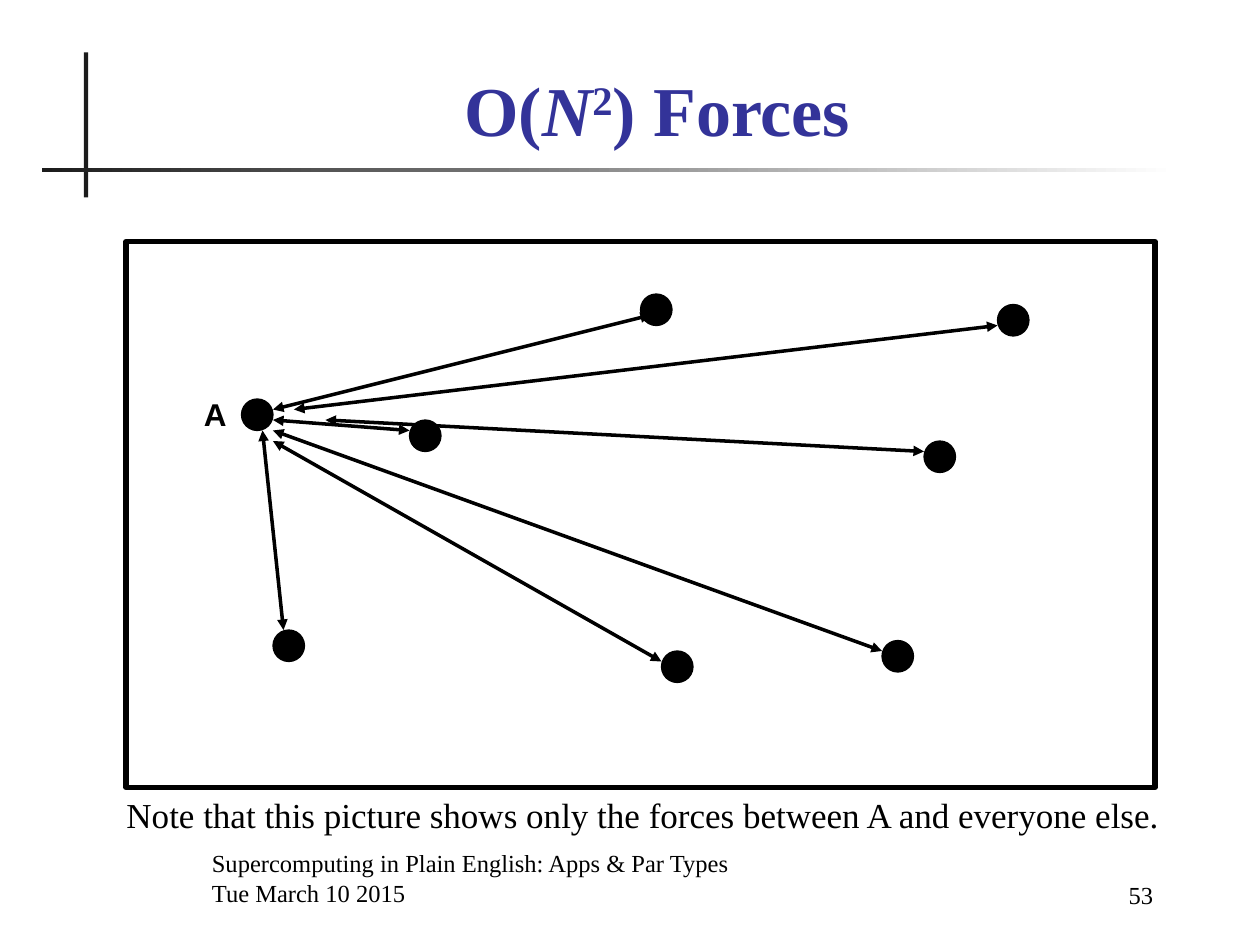
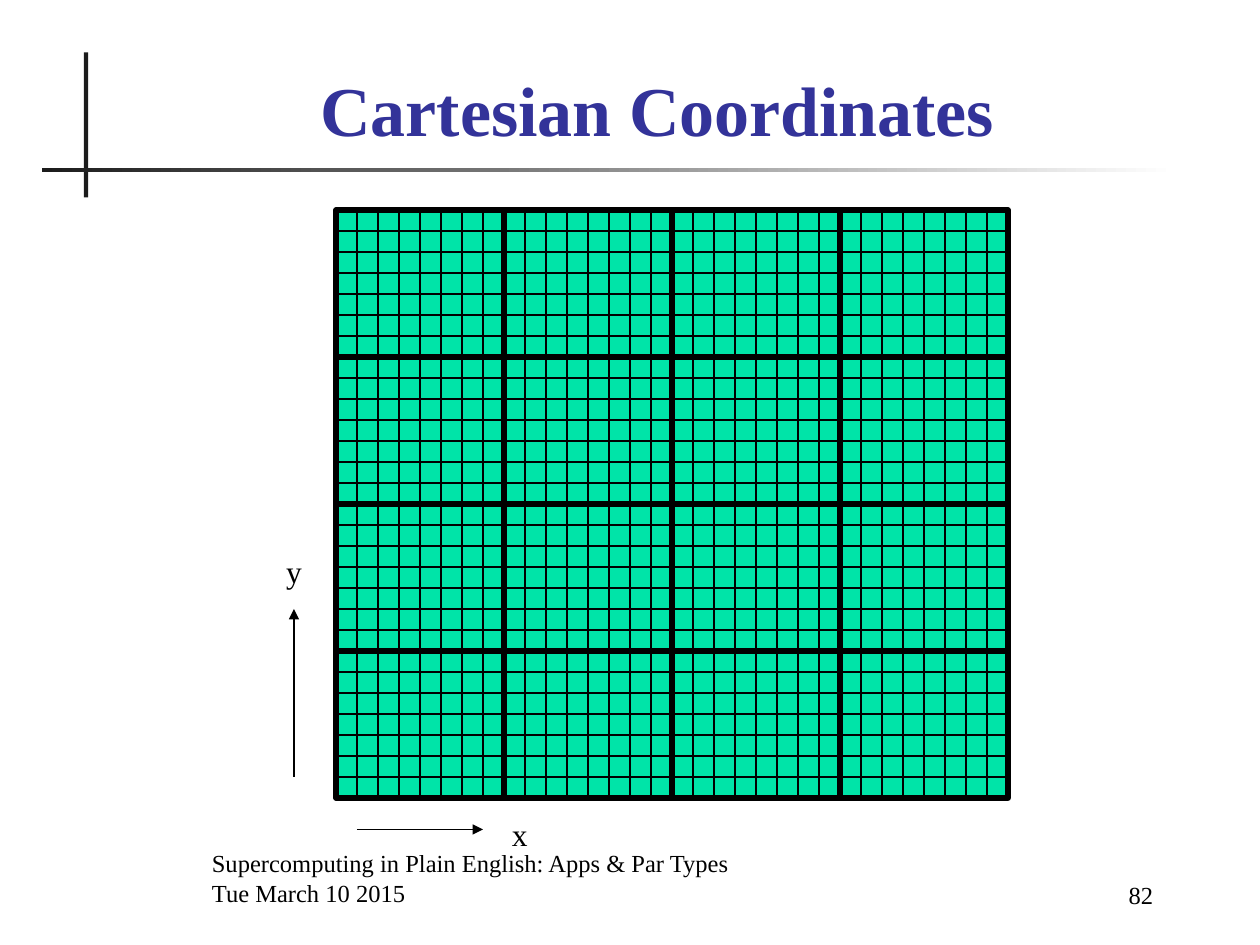
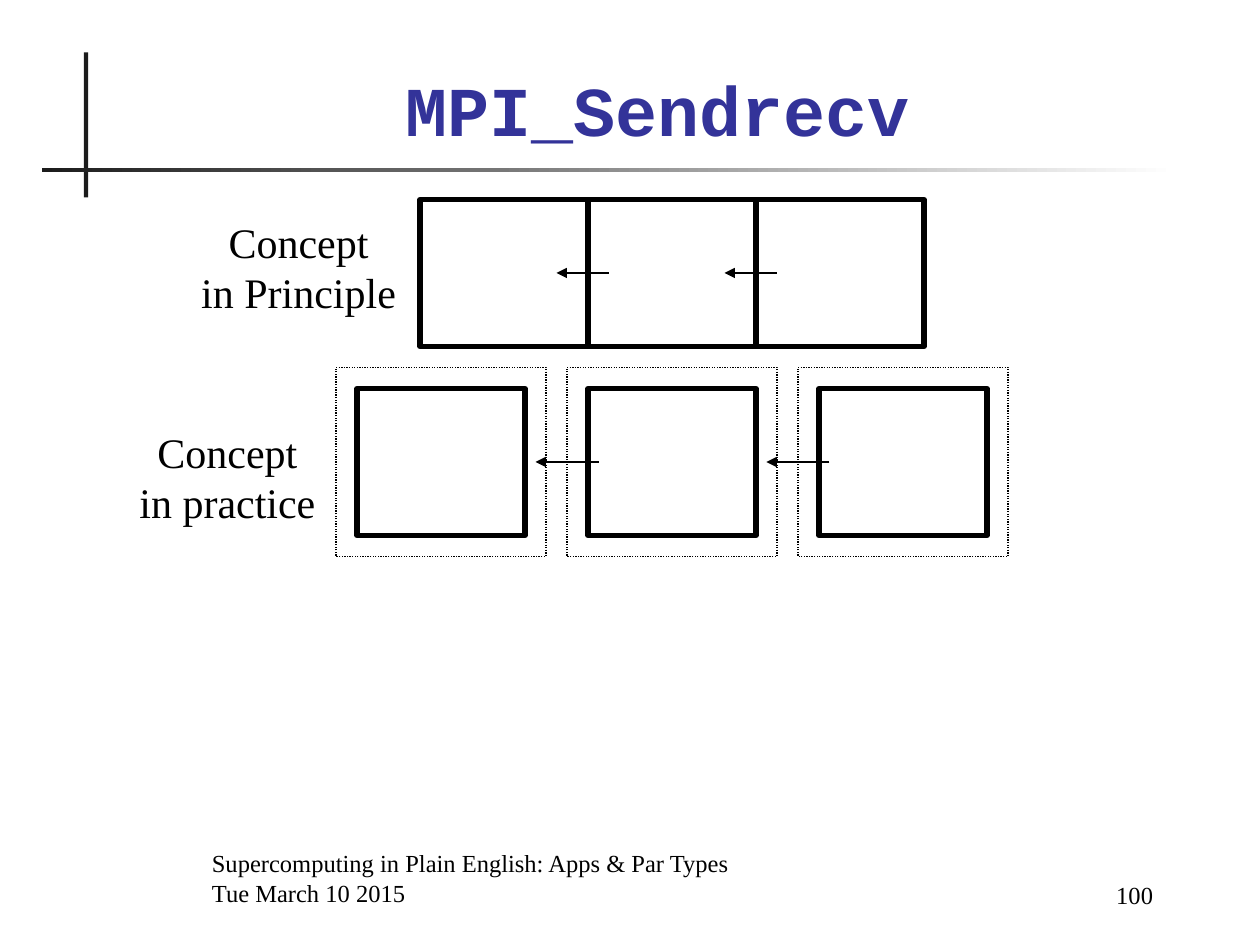
"""Build three slides on N-body forces, Cartesian grids and MPI_Sendrecv."""
from lxml import etree
from pptx import Presentation
from pptx.dml.color import RGBColor
from pptx.enum.dml import MSO_LINE
from pptx.enum.shapes import MSO_CONNECTOR, MSO_SHAPE
from pptx.enum.text import MSO_ANCHOR, MSO_AUTO_SIZE, PP_ALIGN
from pptx.oxml.ns import qn
from pptx.util import Inches, Pt

RECT, OVAL = MSO_SHAPE.RECTANGLE, MSO_SHAPE.OVAL
STRAIGHT = MSO_CONNECTOR.STRAIGHT
DOTTED = MSO_LINE.ROUND_DOT
LEFT, CENTER, RIGHT = PP_ALIGN.LEFT, PP_ALIGN.CENTER, PP_ALIGN.RIGHT
TOP, BOTTOM = MSO_ANCHOR.TOP, MSO_ANCHOR.BOTTOM
NO_FIT = MSO_AUTO_SIZE.NONE

BLACK = RGBColor(0x00, 0x00, 0x00)
WHITE = RGBColor(0xFF, 0xFF, 0xFF)
RULE = RGBColor(0x1C, 0x1C, 0x1C)
INDIGO = RGBColor(0x33, 0x33, 0x99)
GREEN = RGBColor(0x00, 0xE4, 0xA8)
SERIF, SANS, MONO = "Times New Roman", "Arial", "Courier New"
THIN, MEDIUM, THICK = 0.75, 2, 3

UNITS_PER_INCH = 12
FOOTER = "Supercomputing in Plain English: Apps & Par Types\nTue March 10 2015"

FORCES_TITLE = [("O(", ""), ("N", "italic"), ("2", "super"), (") Forces", "")]
FORCES_NOTE = "Note that this picture shows only the forces between A and everyone else."
FORCES_FRAME = (12, 23, 98, 52)
BODY_SIZE = 3
BODY_A = (23, 38)
OTHER_BODIES = [
    {"body": (39, 40), "force": ((26, 40), (39, 41))},
    {"body": (26, 60), "force": ((25, 41), (27, 60))},
    {"body": (61, 28), "force": ((26, 39), (62, 30))},
    {"body": (63, 62), "force": ((26, 42), (63, 63))},
    {"body": (84, 61), "force": ((26, 41), (84, 62))},
    {"body": (95, 29), "force": ((28, 39), (95, 31))},
    {"body": (88, 42), "force": ((31, 40), (88, 43))},
]

FIELD_LEFT, FIELD_TOP = 32, 20
BLOCK_W, BLOCK_H, BLOCKS, CELL = 16, 14, 4, 2
AXES = [
    {"name": "x", "arrow": ((34, 79), (46, 79)), "label": (47, 77, 5, 4.8)},
    {"name": "y", "arrow": ((28, 74), (28, 58)), "label": (25, 52, 6, 4.8)},
]

CONCEPTS = [
    {"text": "Concept\nin Principle", "label": (17.88, 20, 21.12, 10.92),
     "left": 40, "top": 19, "pitch": 16, "halo": 0, "reach": (2, -3, 7)},
    {"text": "Concept\nin practice", "label": (12, 40, 19.32, 10.92),
     "left": 34, "top": 37, "pitch": 22, "halo": 2, "reach": (1, -5, 7)},
]


def units(*values):
    return [Inches(value / UNITS_PER_INCH) for value in values]


def add_box(shapes, box, fill=None, outline=None, dash=None, kind=RECT):
    shape = shapes.add_shape(kind, *units(*box))
    shape.shadow.inherit = False
    if fill is None:
        shape.fill.background()
    else:
        shape.fill.solid()
        shape.fill.fore_color.rgb = fill
    if outline is None:
        shape.line.fill.background()
    else:
        shape.line.color.rgb = BLACK
        shape.line.width = Pt(outline)
        if dash:
            shape.line.dash_style = dash
    return shape


def add_line(shapes, start, end, width=THIN, arrows=()):
    line = shapes.add_connector(STRAIGHT, *units(*start, *end))
    line.line.color.rgb = BLACK
    line.line.width = Pt(width)
    properties = line.element.spPr
    for arrow in arrows:
        etree.SubElement(properties.find(qn("a:ln")), qn(arrow), type="triangle")
    etree.SubElement(properties, qn("a:effectLst"))
    return line


def add_label(slide, text, box, size, align=CENTER, anchor=TOP, wrap=True,
              font=SERIF, bold=False):
    frame = slide.shapes.add_textbox(*units(*box)).text_frame
    frame.text = text
    frame.word_wrap = wrap
    frame.vertical_anchor = anchor
    for paragraph in frame.paragraphs:
        paragraph.alignment = align
        for run in paragraph.runs:
            run.font.size, run.font.name, run.font.bold = Pt(size), font, bold
            run.font.color.rgb = BLACK


def start_slide(deck, title_runs, number, title_font=SERIF):
    slide = deck.slides.add_slide(deck.slide_layouts[5])
    add_box(slide.shapes, (8, 5, 0.4, 13.8), RULE)
    fading = add_box(slide.shapes, (4, 16, 108, 0.4), RULE)
    fading.fill.gradient()
    fading.fill.gradient_angle = 0
    for stop, color in zip(fading.fill.gradient_stops, (RULE, WHITE)):
        stop.color.rgb = color
    stops = fading.fill.gradient_stops
    stops[0].position, stops[1].position = 0, 1

    title = slide.shapes.title
    title.left, title.top, title.width, title.height = units(10, 6, 105.2, 8.9)
    frame = title.text_frame
    frame.auto_size = NO_FIT
    frame.vertical_anchor = BOTTOM
    frame.paragraphs[0].alignment = CENTER
    for text, style in title_runs:
        run = frame.paragraphs[0].add_run()
        run.text = text
        run.font.size, run.font.name, run.font.bold = Pt(40), title_font, True
        run.font.color.rgb = INDIGO
        run.font.italic = style == "italic"
        if style == "super":
            run._r.get_or_add_rPr().set("baseline", "30000")

    add_label(slide, FOOTER, (19, 81, 73, 6), 14, LEFT, BOTTOM)
    add_label(slide, str(number), (94, 81.2, 17, 6), 14, RIGHT, BOTTOM)
    return slide


def build_forces(deck):
    slide = start_slide(deck, FORCES_TITLE, 53)
    add_box(slide.shapes, FORCES_FRAME, outline=THICK)
    for body in [BODY_A] + [other["body"] for other in OTHER_BODIES]:
        add_box(slide.shapes, (*body, BODY_SIZE, BODY_SIZE), BLACK, THIN, kind=OVAL)
    for other in OTHER_BODIES:
        add_line(slide.shapes, *other["force"], MEDIUM, ("a:headEnd", "a:tailEnd"))
    add_label(slide, FORCES_NOTE, (10.5, 75, 101.5, 5.3), 20, wrap=False)
    add_label(slide, "A", (18, 37, 5, 4.8), 18, font=SANS, bold=True)


def build_grid(deck):
    slide = start_slide(deck, [("Cartesian Coordinates", "")], 82)
    width, height = BLOCKS * BLOCK_W, BLOCKS * BLOCK_H
    right, bottom = FIELD_LEFT + width, FIELD_TOP + height
    field = add_box(slide.shapes, (FIELD_LEFT, FIELD_TOP, width, height), GREEN, THIN)
    for offset in range(CELL, width, CELL):
        x = FIELD_LEFT + offset
        line = add_line(slide.shapes, (x, FIELD_TOP), (x, bottom))
        if offset * 2 == width:
            line.begin_connect(field, 0)
            line.end_connect(field, 2)
    for offset in range(CELL, height, CELL):
        y = FIELD_TOP + offset
        line = add_line(slide.shapes, (FIELD_LEFT, y), (right, y))
        if offset * 2 == height:
            line.begin_connect(field, 1)
            line.end_connect(field, 3)
    for y in range(FIELD_TOP, bottom, BLOCK_H):
        for x in range(FIELD_LEFT, right, BLOCK_W):
            add_box(slide.shapes, (x, y, BLOCK_W, BLOCK_H), outline=THICK)
    for axis in AXES:
        add_line(slide.shapes, *axis["arrow"], arrows=("a:tailEnd",))
        add_label(slide, axis["name"], axis["label"], 18)


def build_sendrecv(deck):
    slide = start_slide(deck, [("MPI_Sendrecv", "")], 100, MONO)
    for concept in CONCEPTS:
        group = slide.shapes.add_group_shape().shapes
        top, halo = concept["top"], concept["halo"]
        start, end, drop = concept["reach"]
        lefts = [concept["left"] + i * concept["pitch"] for i in range(3)]
        for x in lefts:
            add_box(group, (x, top, BLOCK_W, BLOCK_H), outline=THICK)
            if halo:
                add_box(group, (x - halo, top - halo, BLOCK_W + 2 * halo,
                                BLOCK_H + 2 * halo), outline=THIN, dash=DOTTED)
        for x in lefts[1:]:
            add_line(group, (x + start, top + drop), (x + end, top + drop),
                     arrows=("a:tailEnd",))
        add_label(slide, concept["text"], concept["label"], 24, wrap=False)


def main():
    deck = Presentation()
    deck.slide_width, deck.slide_height = Inches(10), Inches(7.5)
    build_forces(deck)
    build_grid(deck)
    build_sendrecv(deck)
    deck.save("out.pptx")


if __name__ == "__main__":
    main()
